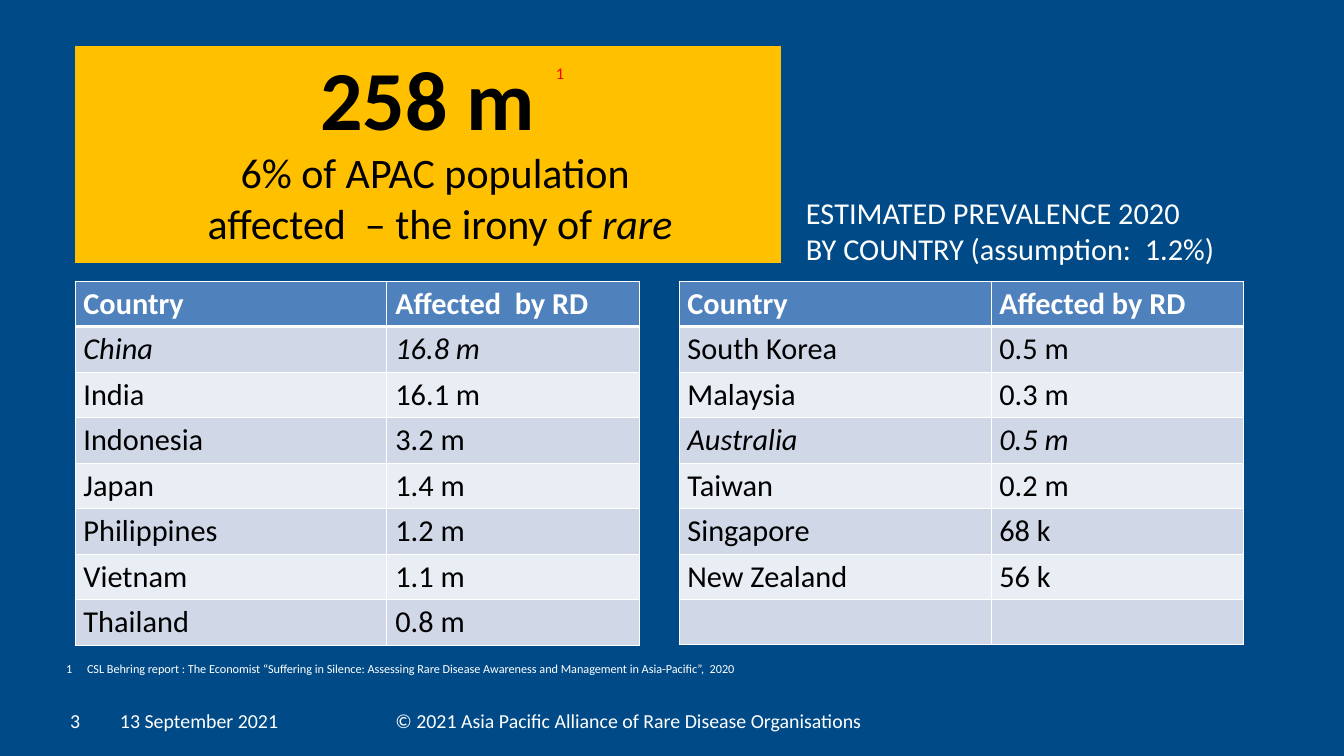
import pptx
import pptx.dml.color
import pptx.enum.text
import pptx.oxml
import pptx.oxml.ns
import pptx.util

SCALE = 914400 / 84  # EMU in one px
ALIGN = pptx.enum.text.PP_ALIGN
ANCHOR = pptx.enum.text.MSO_ANCHOR


def px(length):
    return pptx.util.Emu(round(length * SCALE))


def colour(value):
    return pptx.dml.color.RGBColor.from_string(value)


class SlideBuilder:
    font = "Calibri"
    white, black, red = "FFFFFF", "000000", "FF0000"
    background, callout = "004B87", "FFC000"
    header, bands = "4F81BD", ("D0D8E8", "E9EDF4")

    def __init__(self, presentation):
        self.slide = presentation.slides.add_slide(presentation.slide_layouts[5])
        self.fill(self.slide.background, self.background)

    def fill(self, target, value):
        target.fill.solid()
        target.fill.fore_color.rgb = colour(value)

    def run(self, paragraph, text, size, text_colour, bold=False, italic=False):
        font = paragraph.add_run().font
        paragraph.runs[-1].text = text
        style = {"name": self.font, "size": pptx.util.Pt(size), "bold": bold, "italic": italic}
        for name, value in style.items():
            setattr(font, name, value)
        font.color.rgb = colour(text_colour)

    def frame(self, shape, insets, anchor):
        horizontal, vertical = map(px, insets)
        style = {
            "word_wrap": True, "auto_size": pptx.enum.text.MSO_AUTO_SIZE.NONE,
            "vertical_anchor": anchor, "margin_left": horizontal, "margin_right": horizontal,
            "margin_top": vertical, "margin_bottom": vertical,
        }
        for name, value in style.items():
            setattr(shape.text_frame, name, value)
        return shape.text_frame

    def indent(self, paragraph, left, first=0):
        properties = paragraph._p.get_or_add_pPr()
        properties.set("marL", str(px(left)))
        properties.set("indent", str(px(first)))
        return properties

    def title(self, box, lines):
        """Each line is (left indent, size, runs), and each run (text, bold, italic)."""
        shape = self.slide.shapes.title
        for name, value in zip(("left", "top", "width", "height"), box):
            setattr(shape, name, px(value))
        self.fill(shape, self.callout)
        frame = self.frame(shape, (0, 0), ANCHOR.TOP)
        for number, (left, size, runs) in enumerate(lines):
            paragraph = frame.add_paragraph() if number else frame.paragraphs[0]
            self.indent(paragraph, left)
            paragraph.alignment = ALIGN.CENTER
            for text, bold, italic in runs:
                self.run(paragraph, text, size, self.black, bold, italic)

    def text(self, box, lines, size, text_colour=white, insets=(8, 4),
             anchor=ANCHOR.TOP, align=ALIGN.LEFT, numbered=False):
        shape = self.slide.shapes.add_textbox(*map(px, box))
        frame = self.frame(shape, insets, anchor)
        for number, line in enumerate(lines):
            paragraph = frame.add_paragraph() if number else frame.paragraphs[0]
            if numbered:
                properties = self.indent(paragraph, 21, -21)
                pptx.oxml.ns.qn("a:buAutoNum")
                bullet = properties.makeelement(
                    pptx.oxml.ns.qn("a:buAutoNum"), {"type": "arabicPlain"})
                properties.append(bullet)
            paragraph.alignment = align
            self.run(paragraph, line, size, text_colour)

    def borders(self, cell, top, bottom):
        for side, weight in (("L", 1), ("R", 1), ("T", top), ("B", bottom)):
            cell._tc.get_or_add_tcPr().append(pptx.oxml.parse_xml(
                f'<a:ln{side} {pptx.oxml.ns.nsdecls("a")} w="{pptx.util.Pt(weight)}">'
                f'<a:solidFill><a:srgbClr val="{self.white}"/></a:solidFill></a:ln{side}>'))

    def table(self, left, top, widths, row_height, rows, italic_country):
        box = (left, top, sum(widths), row_height * len(rows))
        table = self.slide.shapes.add_table(len(rows), len(widths), *map(px, box)).table
        for column, width in zip(table.columns, widths):
            column.width = px(width)
        for row_number, row in enumerate(rows):
            heading = row_number == 0
            for column_number, text in enumerate(row):
                cell = table.cell(row_number, column_number)
                self.borders(cell, 3 if row_number == 1 else 1, 3 if heading else 1)
                self.fill(cell, self.header if heading else self.bands[(row_number - 1) % 2])
                if text:
                    self.run(cell.text_frame.paragraphs[0], text, 26,
                             self.white if heading else self.black,
                             bold=heading, italic=row[0] == italic_country)


def main():
    presentation = pptx.Presentation()
    presentation.slide_width, presentation.slide_height = px(1344), px(756)
    builder = SlideBuilder(presentation)

    # Headline figure with its reference mark
    builder.title((75, 46, 706, 217), [
        (0, 72, [("258 m", True, False)]),
        (24, 36, [("6% of APAC population ", False, False)]),
        (24, 36, [("affected  – the irony of ", False, False), ("rare", False, True)]),
    ])
    builder.text((548, 59, 46, 29), ["1"], 14, builder.red)

    # Caption of the tables
    builder.text((798, 190, 428, 82),
                 ["ESTIMATED PREVALENCE 2020", "BY COUNTRY (assumption:  1.2%)"], 26)

    # Country tables
    left_rows = [
        ("Country", "Affected  by RD"), ("China", "16.8 m"), ("India", "16.1 m"),
        ("Indonesia", "3.2 m"), ("Japan", "1.4 m"), ("Philippines", "1.2 m"),
        ("Vietnam", "1.1 m"), ("Thailand", "0.8 m"),
    ]
    right_rows = [
        ("Country", "Affected by RD"), ("South Korea", "0.5 m"), ("Malaysia", "0.3 m"),
        ("Australia", "0.5 m"), ("Taiwan", "0.2 m"), ("Singapore", "68 k"),
        ("New Zealand", "56 k"), ("", ""),
    ]
    for left, rows, italic_country in ((75, left_rows, "China"), (679, right_rows, "Australia")):
        builder.table(left, 281, (312, 253), 45, rows, italic_country)

    # Source note
    builder.text((58, 657, 861, 24), [
        "CSL Behring report : The Economist “Suffering in Silence: Assessing Rare Disease "
        "Awareness and Management in Asia-Pacific”,  2020"], 10.5, numbered=True)

    # Footer
    for left, width, inset, align, text in (
        (58, 62, (12, 6), ALIGN.LEFT, "3"),
        (120, 218, (0, 0), ALIGN.LEFT, "13 September 2021"),
        (338, 581, (12, 6), ALIGN.CENTER,
         "© 2021 Asia Pacific Alliance of Rare Disease Organisations"),
    ):
        builder.text((left, 701, width, 40), [text], 17, insets=inset,
                     anchor=ANCHOR.MIDDLE, align=align)

    presentation.save("out.pptx")


if __name__ == "__main__":
    main()
